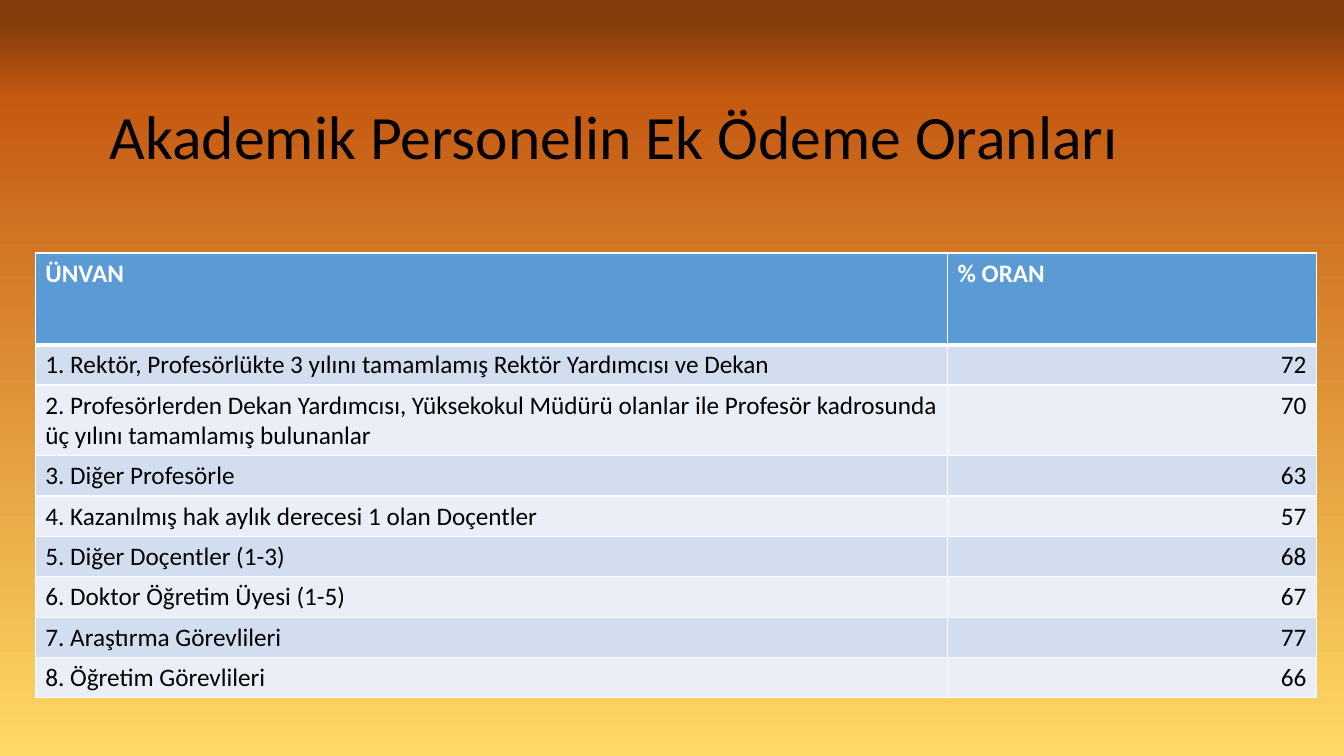
from lxml.etree import SubElement
from pptx import Presentation
from pptx.dml.color import RGBColor as Rgb
from pptx.enum.text import MSO_AUTO_SIZE as AutoSize, PP_ALIGN as Align
from pptx.oxml.ns import qn
from pptx.util import Inches, Pt

COLORS = {
    "brown": "843C0B", "rust": "C55A11", "gold": "FFD966",
    "header": "5B9BD5", "odd": "D2DEEF", "even": "EAEFF7",
    "text": "000000", "white": "FFFFFF",
}
BACKDROP = [(0, "brown"), (3, "brown"), (13, "rust"), (100, "gold")]
HEADINGS = ("ÜNVAN", "% ORAN")
RATES = [
    ("1. Rektör, Profesörlükte 3 yılını tamamlamış Rektör Yardımcısı ve Dekan", 72),
    ("2. Profesörlerden Dekan Yardımcısı, Yüksekokul Müdürü olanlar ile Profesör "
     "kadrosunda üç yılını tamamlamış bulunanlar", 70),
    ("3. Diğer Profesörle", 63),
    ("4. Kazanılmış hak aylık derecesi 1 olan Doçentler", 57),
    ("5. Diğer Doçentler (1-3)", 68),
    ("6. Doktor Öğretim Üyesi (1-5)", 67),
    ("7. Araştırma Görevlileri", 77),
    ("8. Öğretim Görevlileri", 66),
]
COLUMN_WIDTHS = [67.88, 27.45]
ROW_HEIGHTS = [12.13, 5.33, 9.2] + [5.33] * 6


class RateSlide:
    """Draws one slide in a single style, with lengths in percent of its size."""

    font = "Calibri"

    def __init__(self, deck):
        self.deck = deck
        self.slide = deck.slides.add_slide(deck.slide_layouts[6])

    def across(self, share):
        return round(self.deck.slide_width * share / 100)

    def down(self, share):
        return round(self.deck.slide_height * share / 100)

    def backdrop(self, stops):
        fill = self.slide.background.fill
        fill.gradient()
        fill.gradient_angle = 270
        stop_list = self.slide.element.find(".//" + qn("a:gsLst"))
        for old_stop in list(stop_list):
            stop_list.remove(old_stop)
        for position, color in stops:
            stop = SubElement(stop_list, qn("a:gs"), pos=str(position * 1000))
            SubElement(stop, qn("a:srgbClr"), val=COLORS[color])

    def set_text(self, frame, text, size, color, align=Align.LEFT, bold=False):
        paragraph = frame.paragraphs[0]
        paragraph.text = text
        paragraph.alignment = align
        font = paragraph.font
        font.name, font.size, font.bold = self.font, Pt(size), bold
        font.color.rgb = Rgb.from_string(COLORS[color])

    def title(self, text, left, top, width, height):
        box = self.slide.shapes.add_textbox(
            self.across(left), self.down(top), self.across(width), self.down(height))
        frame = box.text_frame
        frame.word_wrap = True
        frame.auto_size = AutoSize.SHAPE_TO_FIT_TEXT
        self.set_text(frame, text, 44, "text")

    def borders(self, cell, **points):
        properties = cell._tc.get_or_add_tcPr()
        for side in "LRTB":
            line = SubElement(properties, qn("a:ln" + side), w=str(Pt(points.get(side, 1))))
            SubElement(SubElement(line, qn("a:solidFill")), qn("a:srgbClr"), val=COLORS["white"])

    def table(self, headings, records, left, top, widths, heights):
        grid = self.slide.shapes.add_table(
            len(heights), len(widths), self.across(left), self.down(top),
            self.across(sum(widths)), self.down(sum(heights))).table
        for column, width in zip(grid.columns, widths):
            column.width = self.across(width)
        for row, height in zip(grid.rows, heights):
            row.height = self.down(height)
        for r, record in enumerate([headings, *records]):
            heading = r == 0
            fill = "header" if heading else "odd" if r % 2 else "even"
            last_align = Align.JUSTIFY if heading else Align.RIGHT
            for cell, value, align in zip(grid.rows[r].cells, record, (Align.LEFT, last_align)):
                self.borders(cell, T=3 if r == 1 else 1, B=3 if heading else 1)
                cell.fill.solid()
                cell.fill.fore_color.rgb = Rgb.from_string(COLORS[fill])
                self.set_text(cell.text_frame, str(value), 18,
                              "white" if heading else "text", align, heading)


def main():
    deck = Presentation()
    deck.slide_width, deck.slide_height = Inches(13.33), Inches(7.5)
    page = RateSlide(deck)
    page.backdrop(BACKDROP)
    page.title("Akademik Personelin Ek Ödeme Oranları", 7.43, 12.27, 99.7, 11.2)
    page.table(HEADINGS, RATES, 2.63, 33.47, COLUMN_WIDTHS, ROW_HEIGHTS)
    deck.save("out.pptx")


if __name__ == "__main__":
    main()
